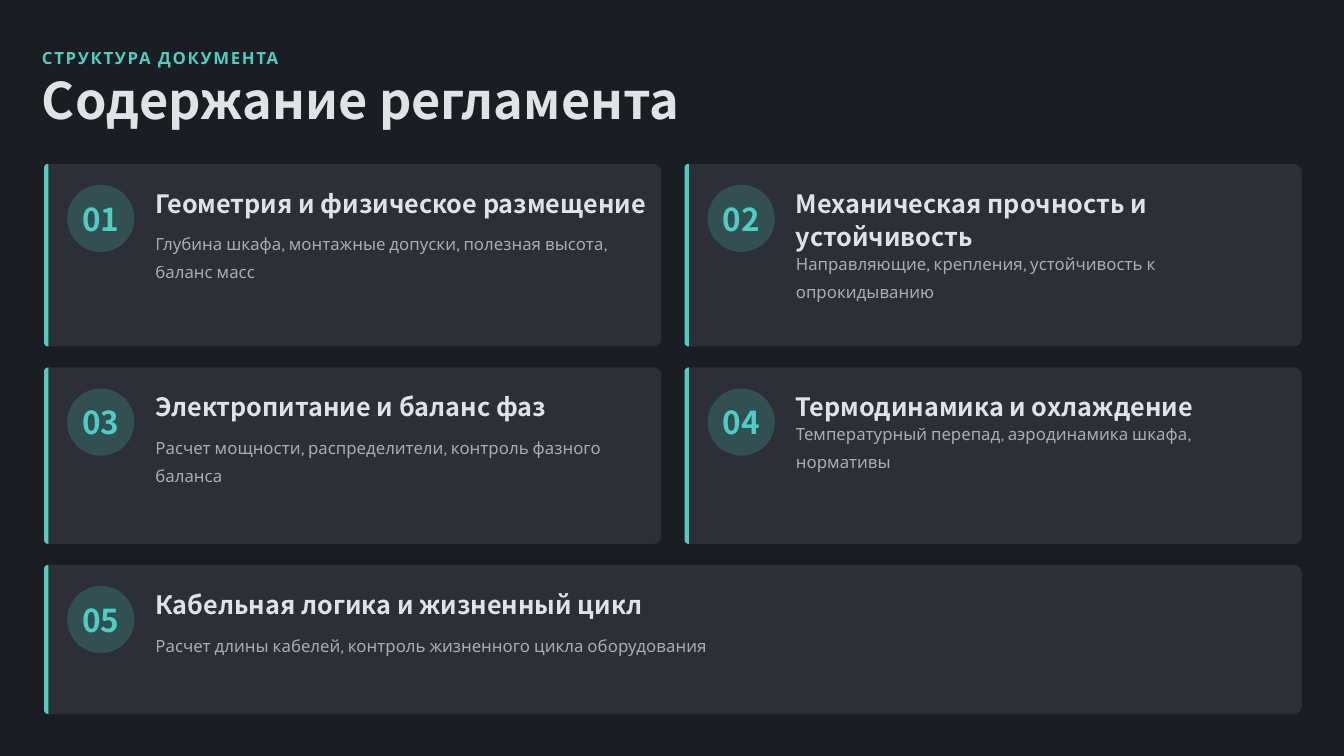
import math
from dataclasses import dataclass

import pptx
import pptx.dml.color
import pptx.enum.shapes
import pptx.enum.text
import pptx.oxml.ns
import pptx.util
from lxml import etree

Pt = pptx.util.Pt


@dataclass(frozen=True)
class Theme:
    background: str = "1A1D21"
    card: str = "2C3036"
    accent: str = "4ECDC4"
    ink: str = "E0E2E5"
    heading_font: str = "Noto Sans CJK SC"
    body_font: str = "Karla"
    title_size: float = 36
    number_size: float = 22.5
    heading_size: float = 18
    body_size: float = 12


THEME = Theme()

LEFT, TOP = 31.5, 117
CARD_WIDTH = 441
COLUMN_GAP, ROW_GAP = 16.5, 15
HEADING_LINE, SUMMARY_LINE = 24, 19.5

# Each row: height, then (heading, heading lines, summary, summary lines) per card.
ROWS = [
    (130.5, [
        ("Геометрия и физическое размещение", 1,
         "Глубина шкафа, монтажные допуски, полезная высота, баланс масс", 2),
        ("Механическая прочность и устойчивость", 2,
         "Направляющие, крепления, устойчивость к опрокидыванию", 1),
    ]),
    (126, [
        ("Электропитание и баланс фаз", 1,
         "Расчет мощности, распределители, контроль фазного баланса", 2),
        ("Термодинамика и охлаждение", 1,
         "Температурный перепад, аэродинамика шкафа, нормативы", 1),
    ]),
    (106.5, [
        ("Кабельная логика и жизненный цикл", 1,
         "Расчет длины кабелей, контроль жизненного цикла оборудования", 1),
    ]),
]


def rgb(color):
    return pptx.dml.color.RGBColor.from_string(color)


def set_alpha(fill, percent):
    """Make a solid fill partly transparent; percent is its opacity."""
    color = fill._xPr.find(".//" + pptx.oxml.ns.qn("a:srgbClr"))
    etree.SubElement(color, pptx.oxml.ns.qn("a:alpha"), val=str(percent * 1000))


def paint(shape, color, opacity=100):
    shape.shadow.inherit = False
    shape.line.fill.background()
    shape.fill.solid()
    shape.fill.fore_color.rgb = rgb(color)
    if opacity < 100:
        set_alpha(shape.fill, opacity)


def add_text(slide, text, x, y, width, height, *, size, font=THEME.heading_font,
             color=THEME.ink, bold=True, line_spacing=1.0, tracking=0, opacity=100):
    frame = slide.shapes.add_textbox(Pt(x), Pt(y), Pt(width), Pt(height)).text_frame
    frame.word_wrap = True
    frame.vertical_anchor = pptx.enum.text.MSO_ANCHOR.MIDDLE
    frame.margin_left = frame.margin_right = frame.margin_top = frame.margin_bottom = 0
    paragraph = frame.paragraphs[0]
    paragraph.line_spacing = line_spacing
    run = paragraph.add_run()
    run.text = text
    run.font.name = font
    run.font.size = Pt(size)
    run.font.bold = bold
    run.font.color.rgb = rgb(color)
    if opacity < 100:
        set_alpha(run.font.fill, opacity)
    if tracking:
        run.font._element.set("spc", str(round(tracking * 100)))


def add_panel(slide, x, y, width, height, color, left_radius, right_radius):
    """Draw a rectangle whose left and right corners have their own radii."""
    corners = [
        (x + left_radius, y + left_radius, left_radius, 180),
        (x + width - right_radius, y + right_radius, right_radius, 270),
        (x + width - right_radius, y + height - right_radius, right_radius, 0),
        (x + left_radius, y + height - left_radius, left_radius, 90),
    ]
    outline = []
    for center_x, center_y, radius, start in corners:
        for step in range(0, 91, 15) if radius else [0]:
            angle = math.radians(start + step)
            outline.append((Pt(center_x + radius * math.cos(angle)),
                            Pt(center_y + radius * math.sin(angle))))
    builder = slide.shapes.build_freeform(*outline[0])
    builder.add_line_segments(outline[1:], close=True)
    paint(builder.convert_to_shape(), color)


def add_badge(slide, x, y, number):
    circle = slide.shapes.add_shape(
        pptx.enum.shapes.MSO_SHAPE.OVAL, Pt(x), Pt(y), Pt(48), Pt(48))
    paint(circle, THEME.accent, opacity=20)
    add_text(slide, f"{number:02}", x + 10.8, y + 10.5, 37.5, 27,
             size=THEME.number_size, color=THEME.accent)


def add_card(slide, x, y, width, height, number, section):
    heading, heading_lines, summary, summary_lines = section
    add_panel(slide, x, y, width, height, THEME.card, 3, 6)
    add_panel(slide, x, y, 3, height, THEME.accent, 3, 0)
    add_badge(slide, x + 16.5, y + 15, number)
    text_x, heading_y = x + 79.5, y + 15
    heading_height = heading_lines * HEADING_LINE
    add_text(slide, heading, text_x, heading_y, width - 85.5, heading_height,
             size=THEME.heading_size, line_spacing=1.1)
    add_text(slide, summary, text_x, heading_y + heading_height + 6, width - 88.5,
             summary_lines * SUMMARY_LINE, size=THEME.body_size, font=THEME.body_font,
             bold=False, line_spacing=1.4, opacity=70)


def add_header(slide):
    add_text(slide, "СТРУКТУРА ДОКУМЕНТА", 30, 30, 906, 18, size=THEME.body_size,
             font=THEME.body_font, color=THEME.accent, line_spacing=1.3, tracking=1.2)
    add_text(slide, "Содержание регламента", 30, 57, 918, 36,
             size=THEME.title_size, line_spacing=0.8)


def add_contents(slide):
    y, number = TOP, 1
    for height, sections in ROWS:
        width = CARD_WIDTH if len(sections) == 2 else 2 * CARD_WIDTH + COLUMN_GAP
        for column, section in enumerate(sections):
            x = LEFT + column * (CARD_WIDTH + COLUMN_GAP)
            add_card(slide, x, y, width, height, number, section)
            number += 1
        y += height + ROW_GAP


def main():
    deck = pptx.Presentation()
    deck.slide_width, deck.slide_height = Pt(960), Pt(540)
    slide = deck.slides.add_slide(deck.slide_layouts[6])
    slide.background.fill.solid()
    slide.background.fill.fore_color.rgb = rgb(THEME.background)
    add_header(slide)
    add_contents(slide)
    deck.save("out.pptx")


if __name__ == "__main__":
    main()
